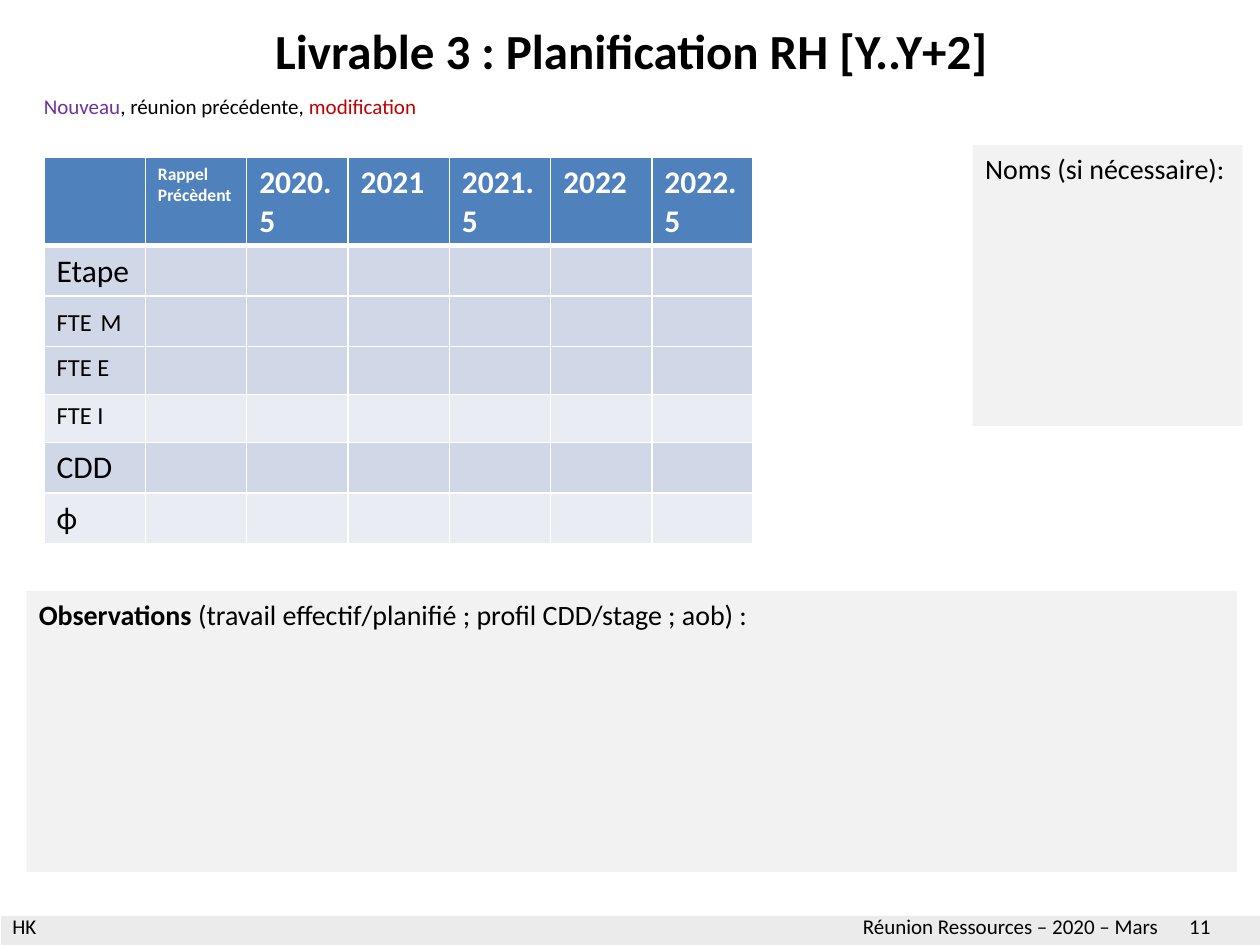
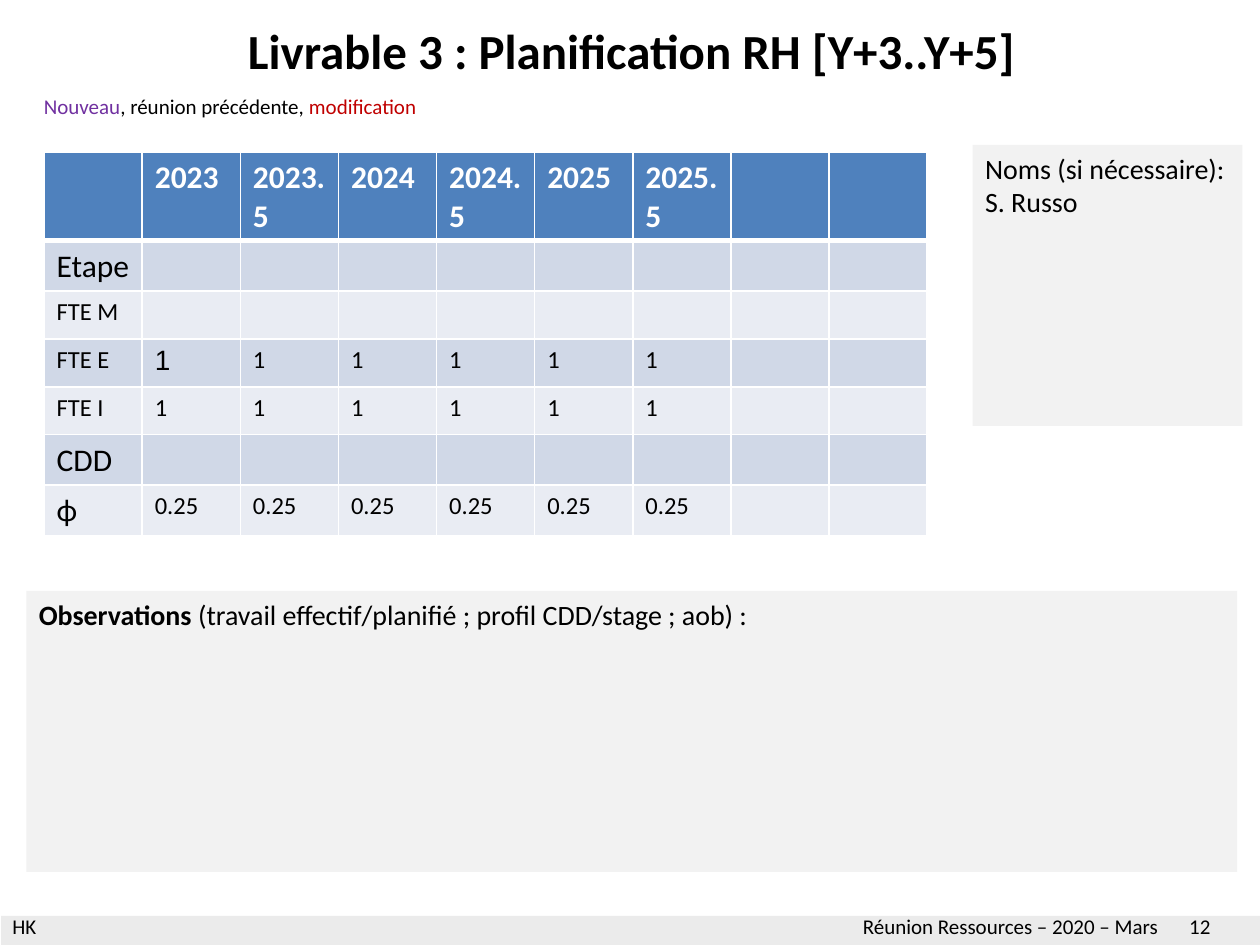
"""Build the two HR planning slides of deliverable 3."""
from dataclasses import dataclass

from lxml.etree import SubElement
from pptx import Presentation
from pptx.dml.color import RGBColor
from pptx.enum.shapes import MSO_SHAPE
from pptx.enum.text import MSO_ANCHOR, PP_ALIGN
from pptx.oxml import parse_xml
from pptx.oxml.ns import nsdecls, qn
from pptx.util import Inches, Pt


@dataclass(frozen=True)
class Theme:
    font: str = "Calibri"
    alt_font: str = "Arial"
    black: str = "000000"
    white: str = "FFFFFF"
    purple: str = "7030A0"
    red: str = "C00000"
    panel: str = "F2F2F2"
    footer: str = "D9D9D9"
    header: str = "4F81BD"
    dark_row: str = "D0D8E7"
    light_row: str = "E9ECF3"
    title: int = 28
    label: int = 18
    body: int = 16
    value: int = 14
    small: int = 12
    tiny: int = 10


T = Theme()
ROWS = [("Etape", T.label), ("FTE M", T.value), ("FTE E", T.value),
        ("FTE I", T.value), ("CDD", T.label), ("ϕ", T.label)]


def add_run(p, text, **fmt):
    r = p.add_run()
    r.text = text
    values = {"name": T.font, "size": T.body, "bold": False, "color": T.black, **fmt}
    values["size"] = Pt(values["size"])
    r.font.color.rgb = RGBColor.from_string(values.pop("color"))
    for key, value in values.items():
        setattr(r.font, key, value)


def fill_text(tf, paragraphs, align=PP_ALIGN.LEFT):
    for i, runs in enumerate(paragraphs):
        p = tf.paragraphs[0] if i == 0 else tf.add_paragraph()
        p.alignment = align
        for text, fmt in runs:
            add_run(p, text, **fmt)


def add_text(s, box, runs, align=PP_ALIGN.LEFT, anchor=MSO_ANCHOR.TOP):
    tf = s.shapes.add_textbox(*map(Inches, box)).text_frame
    tf.word_wrap = True
    tf.vertical_anchor = anchor
    fill_text(tf, [runs], align)


def add_rect(s, box, color):
    sp = s.shapes.add_shape(MSO_SHAPE.RECTANGLE, *map(Inches, box))
    sp.shadow.inherit = False
    sp.fill.solid()
    sp.fill.fore_color.rgb = RGBColor.from_string(color)
    sp.line.fill.background()
    return sp


def add_panel(s, box, paragraphs):
    tf = add_rect(s, box, T.panel).text_frame
    tf.word_wrap = True
    tf.vertical_anchor = MSO_ANCHOR.TOP
    fill_text(tf, paragraphs)


def add_footer(s, page):
    band = add_rect(s, (0.01, 7.27, 9.99, 0.23), T.footer)
    color = band.fill._xPr.find(".//" + qn("a:srgbClr"))
    SubElement(color, qn("a:alpha"), val="50000")
    for left, width, text in [(6.75, 2.6, "Réunion Ressources – 2020 – Mars"),
                              (9.34, 0.6, str(page)), (0, 1.23, "HK")]:
        add_text(s, (left, 7.2, width, 0.3), [(text, {"size": T.small})])


def set_borders(cell, top, bottom):
    tc_pr = cell._tc.get_or_add_tcPr()
    widths = {"lnL": 0.96, "lnR": 0.96, "lnT": top, "lnB": bottom}
    for i, (tag, width) in enumerate(widths.items()):
        tc_pr.insert(i, parse_xml(
            f'<a:{tag} {nsdecls("a")} w="{Pt(width)}"><a:solidFill>'
            f'<a:srgbClr val="{T.white}"/></a:solidFill></a:{tag}>'))


def style_cell(cell, color, paragraphs, size, row):
    cell.fill.solid()
    cell.fill.fore_color.rgb = RGBColor.from_string(color)
    set_borders(cell, 3 if row == 1 else 0.96, 3 if row == 0 else 0.96)
    if paragraphs:
        fill_text(cell.text_frame, paragraphs)
    else:
        p = cell.text_frame.paragraphs[0]
        SubElement(p._p, qn("a:endParaRPr"), sz=str(size * 100))


def add_plan(s, top, width, heads, fills, cells):
    cols = len(heads) + 1
    frame = s.shapes.add_table(len(ROWS) + 1, cols, Inches(0.35), Inches(top),
                               Inches(width), Inches(3.06))
    table = frame.table
    for col in table.columns:
        col.width = Inches(width / cols)
    for i, row in enumerate(table.rows):
        row.height = Inches(0.38 if i else 0.7)
    for c, head in enumerate([[], *heads]):
        style_cell(table.cell(0, c), T.header, head, T.label, 0)
    for r, ((label, size), color) in enumerate(zip(ROWS, fills), 1):
        for c in range(cols):
            default = [[(label, {"size": size})]] if c == 0 else []
            style_cell(table.cell(r, c), color, cells.get((r, c), default), size, r)


def head_cell(*lines, size=T.label):
    return [[(line, {"size": size, "bold": True, "color": T.white})] for line in lines]


def value_cell(text, **fmt):
    return [[(text, {"size": T.value, **fmt})]]


def add_plan_slide(prs, page, period, names, plan):
    s = prs.slides.add_slide(prs.slide_layouts[6])
    add_footer(s, page)
    add_plan(s, **plan)
    add_text(s, (0.51, 0.05, 9, 0.69),
             [(f"Livrable 3 : Planification RH [{period}]", {"size": T.title, "bold": True})],
             PP_ALIGN.CENTER, MSO_ANCHOR.MIDDLE)
    add_panel(s, (7.72, 1.15, 2.14, 2.23),
              [[(line, {})] for line in ["Noms (si nécessaire):", *names]])
    legend = [("Nouveau", T.purple), (", réunion précédente, ", T.black),
              ("modification", T.red)]
    add_text(s, (0.25, 0.69, 3.3, 0.3),
             [(text, {"size": T.small, "color": color}) for text, color in legend])
    add_panel(s, (0.21, 4.69, 9.61, 2.23),
              [[("Observations", {"bold": True}),
                (" (travail effectif/planifié ; profil CDD/stage ; aob) :", {})]])


def main():
    prs = Presentation()
    prs.slide_width, prs.slide_height = Inches(10), Inches(7.5)
    dark, light = T.dark_row, T.light_row

    near_years = ["2020.5", "2021", "2021.5", "2022", "2022.5"]
    fte_m = [[("FTE", {"size": T.value}),
              (" ", {"size": T.label, "name": T.alt_font}),
              ("M", {"size": T.value})]]
    add_plan_slide(prs, 11, "Y..Y+2", [], {
        "top": 1.25, "width": 5.63,
        "heads": [head_cell("Rappel", "Précèdent", size=T.tiny),
                  *map(head_cell, near_years)],
        "fills": [dark, dark, dark, light, dark, light],
        "cells": {(2, 0): fte_m}})

    far_years = ["2023", "2023.5", "2024", "2024.5", "2025", "2025.5"]
    staffing = {(row, col): value_cell(text)
                for row, text in [(3, "1"), (4, "1"), (6, "0.25")]
                for col in range(1, len(far_years) + 1)}
    staffing[3, 1] = value_cell("1", size=T.body, name=T.alt_font)
    add_plan_slide(prs, 12, "Y+3..Y+5", ["S. Russo"], {
        "top": 1.21, "width": 7.01,
        "heads": [*map(head_cell, far_years), [], []],
        "fills": [dark, light] * 3,
        "cells": staffing})
    prs.save("out.pptx")


if __name__ == "__main__":
    main()
